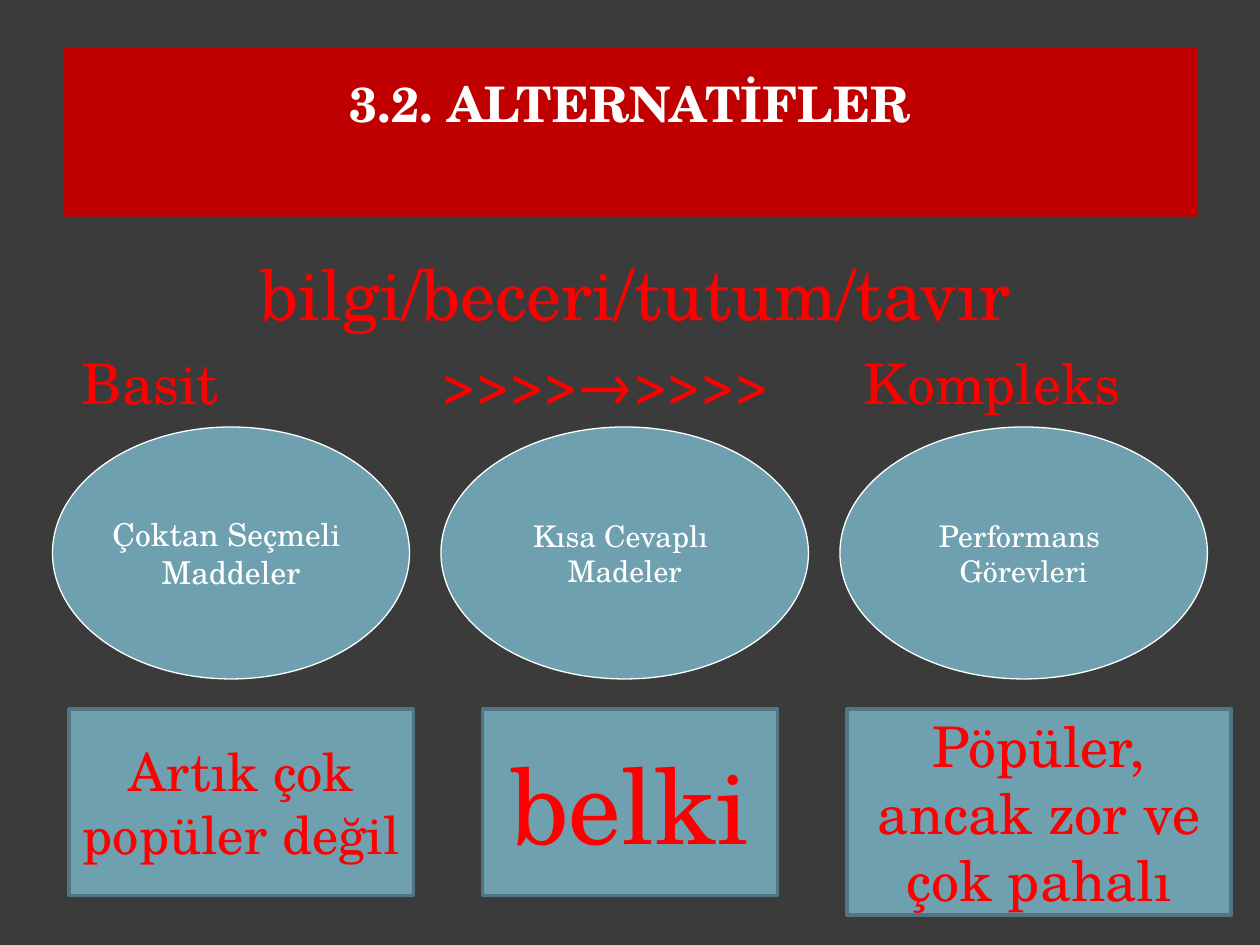
from lxml import etree
from pptx import Presentation
from pptx.dml.color import RGBColor
from pptx.enum.shapes import MSO_SHAPE as SHAPE
from pptx.enum.text import MSO_ANCHOR as ANCHOR, MSO_AUTO_SIZE as AUTO, PP_ALIGN as ALIGN
from pptx.oxml.ns import qn
from pptx.util import Pt

FONT = "TeX Gyre Schola"
WHITE, RED, BLUE = "FFFFFF", "FF0000", "6EA0B0"

# Content: boxes are left, top, width, height in points
TITLE, TITLE_BOX = "3.2. ALTERNATİFLER", (36, 27.36, 648, 96.48)
HEADING, HEADING_BOX = "bilgi/beceri/tutum/tavır", (39.6, 139.7, 646.6, 55.4)
SCALE, SCALE_BOX = ["Basit", ">>>>→>>>>", "Kompleks"], (39.6, 195.8, 646.6, 46.1)
SCALE_TABS = [206, 447]

OVAL_TOP, OVAL_H = 244, 144
OVALS = [  # left, width, size, hanging indent, lines
    (30, 204, 18, 27, ["Çoktan Seçmeli ", "Maddeler"]),
    (252, 210, 17, 0, ["Kısa Cevaplı ", "Madeler"]),
    (480, 210, 17, 0, ["Performans ", "Görevleri"]),
]
VERDICT_TOP = 405
VERDICTS = [  # left, width, height, size, text
    (39.6, 196.6, 106.6, 30, "Artık çok popüler değil"),
    (275.8, 168.5, 106.6, 60, "belki"),
    (484, 219.6, 118, 32, "Pöpüler, ancak zor ve çok pahalı"),
]


def rgb(value):
    return RGBColor.from_string(value)


def write(tf, lines, size, color, align=ALIGN.CENTER, bold=False):
    for i, line in enumerate(lines):
        p = tf.add_paragraph() if i else tf.paragraphs[0]
        p.alignment = align
        r = p.add_run()
        r.text = line
        r.font.name, r.font.size, r.font.bold = FONT, Pt(size), bold
        r.font.color.rgb = rgb(color)


def add_figure(kind, box, line, line_width):
    sp = s.shapes.add_shape(kind, *map(Pt, box))
    sp.shadow.inherit = False
    sp.fill.solid()
    sp.fill.fore_color.rgb = rgb(BLUE)
    sp.line.color.rgb = rgb(line)
    sp.line.width = Pt(line_width)
    sp.text_frame.vertical_anchor = ANCHOR.MIDDLE
    return sp.text_frame


def add_text(box):
    tf = s.shapes.add_textbox(*map(Pt, box)).text_frame
    tf.word_wrap = True
    tf.auto_size = AUTO.SHAPE_TO_FIT_TEXT
    return tf


prs = Presentation()
prs.slide_width, prs.slide_height = Pt(720), Pt(540)
s = prs.slides.add_slide(prs.slide_layouts[5])
s.background.fill.solid()
s.background.fill.fore_color.rgb = rgb("3B3B3B")

# Title bar: the closing line break lifts the text above the middle
title = s.shapes.title
title.left, title.top, title.width, title.height = map(Pt, TITLE_BOX)
title.fill.solid()
title.fill.fore_color.rgb = rgb("C00000")
tf = title.text_frame
tf.auto_size = AUTO.NONE
tf.vertical_anchor = ANCHOR.MIDDLE
write(tf, [TITLE], 28, WHITE, bold=True)
tf.paragraphs[0].add_line_break()
tf.paragraphs[0].font.size = Pt(28)

# Heading and the simple-to-complex scale
write(add_text(HEADING_BOX), [HEADING], 40, RED)
tf = add_text(SCALE_BOX)
write(tf, ["\t".join(SCALE)], 32, RED, ALIGN.LEFT)
tabs = etree.SubElement(tf.paragraphs[0]._p.get_or_add_pPr(), qn("a:tabLst"))
for pos in SCALE_TABS:
    etree.SubElement(tabs, qn("a:tab"), pos=str(Pt(pos)), algn="l")

# Item types
for left, width, size, hang, lines in OVALS:
    tf = add_figure(SHAPE.OVAL, (left, OVAL_TOP, width, OVAL_H), WHITE, 0.75)
    tf.word_wrap = False
    write(tf, lines, size, WHITE)
    if hang:
        for p in tf.paragraphs:
            pPr = p._p.get_or_add_pPr()
            pPr.set("marL", str(Pt(hang)))
            pPr.set("indent", str(-Pt(hang)))

# Verdicts below them
for left, width, height, size, text in VERDICTS:
    tf = add_figure(SHAPE.RECTANGLE, (left, VERDICT_TOP, width, height), "517682", 2)
    tf.word_wrap = True
    write(tf, [text], size, RED)

prs.save("out.pptx")
